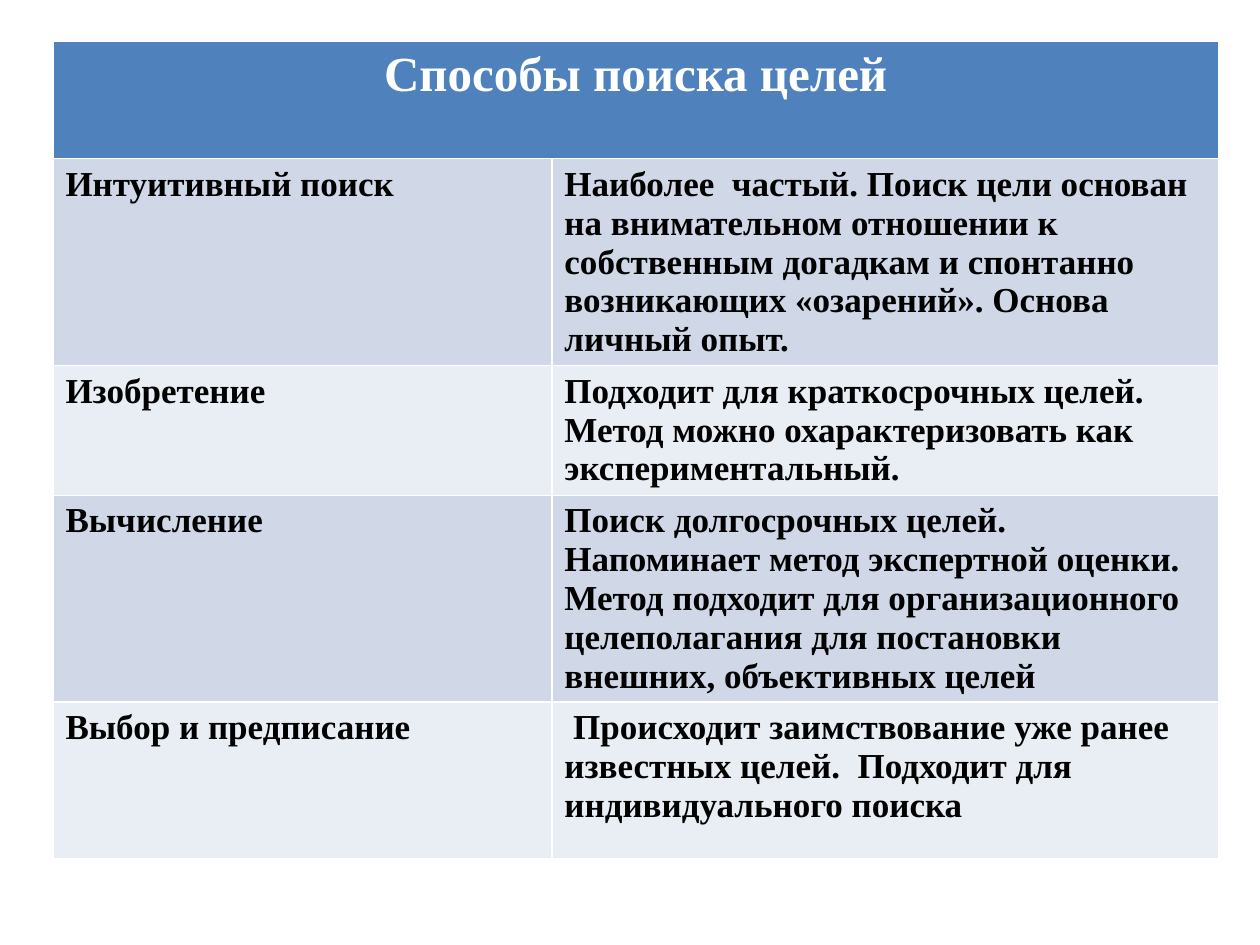
from pptx import Presentation
from pptx.dml.color import RGBColor
from pptx.enum.text import PP_ALIGN
from pptx.util import Inches, Pt

# Content
HEADING = "Способы поиска целей"
METHODS = [
    ("Интуитивный поиск",
     "Наиболее  частый. Поиск цели основан на внимательном отношении к "
     "собственным догадкам и спонтанно возникающих «озарений». Основа личный опыт."),
    ("Изобретение",
     "Подходит для краткосрочных целей. Метод можно охарактеризовать как "
     "экспериментальный."),
    ("Вычисление",
     "Поиск долгосрочных целей. Напоминает метод экспертной оценки. Метод подходит "
     "для организационного целеполагания для постановки внешних, объективных целей"),
    ("Выбор и предписание",
     " Происходит заимствование уже ранее известных целей.  Подходит для "
     "индивидуального поиска"),
]

# Layout and style
LEFT, TOP = 0.42, 0.33
COLUMN_WIDTHS = [3.96, 5.29]
ROW_HEIGHTS = [0.93, 1.37, 1.03, 1.35, 1.24]
FONT = "Times New Roman"
HEADER_FILL = "4F81BD"
BAND_FILLS = ["D0D8E8", "E9EDF4"]


def color(value):
    return RGBColor.from_string(value)


def fill_cell(cell, text, size, text_color, fill, alignment=None):
    cell.text = text
    cell.fill.solid()
    cell.fill.fore_color.rgb = color(fill)
    paragraph = cell.text_frame.paragraphs[0]
    paragraph.alignment = alignment
    font = paragraph.font
    font.name, font.size, font.bold = FONT, Pt(size), True
    font.color.rgb = color(text_color)


def main():
    presentation = Presentation()
    presentation.slide_width, presentation.slide_height = Inches(10), Inches(7.5)
    slide = presentation.slides.add_slide(presentation.slide_layouts[6])

    # Table grid; the default table style draws the white borders
    table = slide.shapes.add_table(
        len(ROW_HEIGHTS), len(COLUMN_WIDTHS), Inches(LEFT), Inches(TOP),
        Inches(sum(COLUMN_WIDTHS)), Inches(sum(ROW_HEIGHTS))).table
    for column, width in zip(table.columns, COLUMN_WIDTHS):
        column.width = Inches(width)
    for row, height in zip(table.rows, ROW_HEIGHTS):
        row.height = Inches(height)

    # Heading across both columns
    table.cell(0, 0).merge(table.cell(0, 1))
    fill_cell(table.cell(0, 0), HEADING, 28, "FFFFFF", HEADER_FILL, PP_ALIGN.CENTER)

    # Methods in alternating bands
    for row_index, method in enumerate(METHODS, start=1):
        band = BAND_FILLS[(row_index - 1) % len(BAND_FILLS)]
        for column_index, text in enumerate(method):
            fill_cell(table.cell(row_index, column_index), text, 20, "000000", band)

    presentation.save("out.pptx")


if __name__ == "__main__":
    main()
